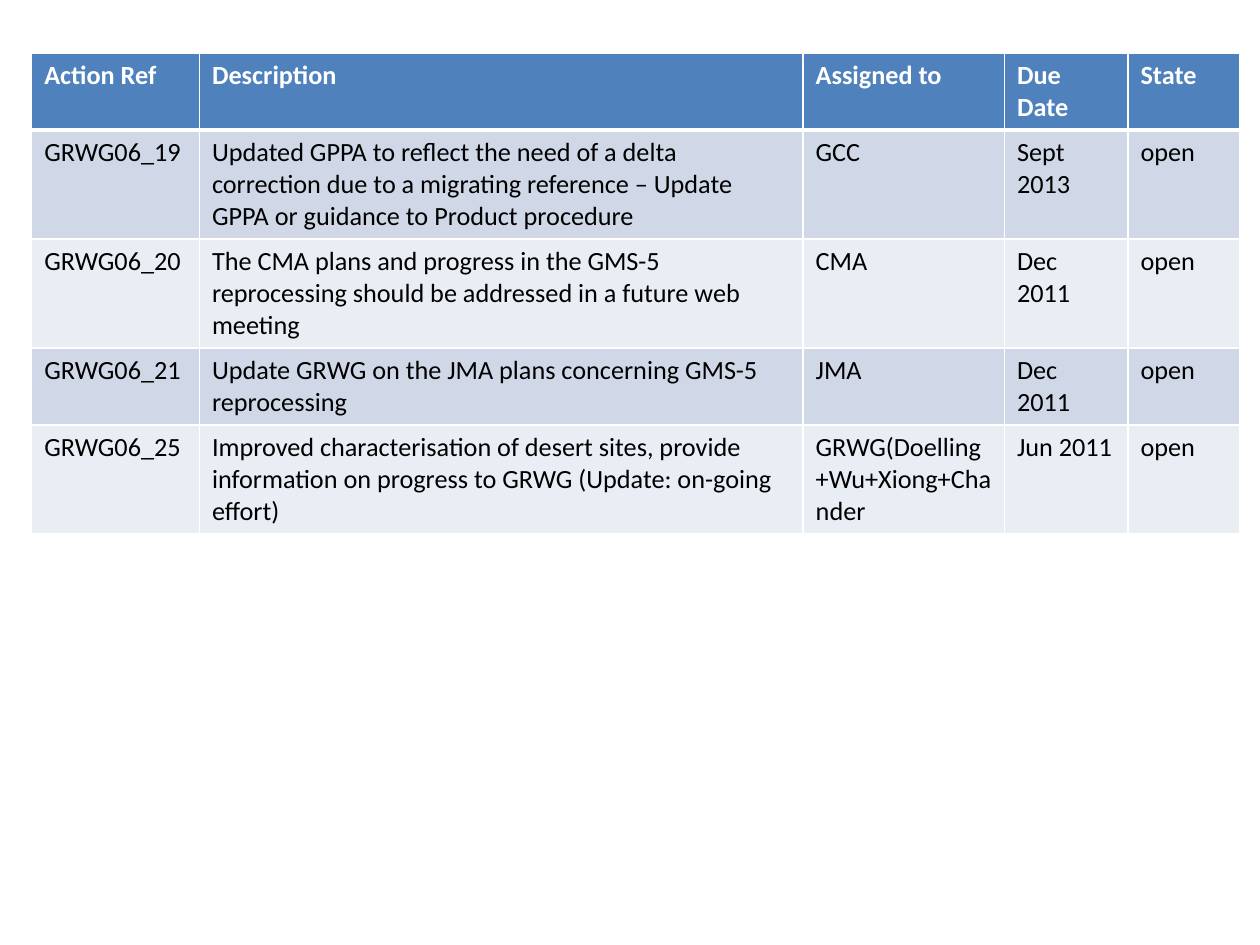
from lxml.etree import SubElement
from pptx import Presentation
from pptx.dml.color import RGBColor
from pptx.oxml.ns import qn
from pptx.util import Cm, Pt

COLORS = {
    "header": "4F81BD",
    "odd_row": "D0D8E8",
    "even_row": "E9EDF4",
    "grid": "FFFFFF",
    "header_text": "FFFFFF",
    "body_text": "000000",
}
COLUMN_WIDTHS = [3.38, 12.17, 4.06, 2.49, 2.26]
ROW_HEIGHT = 1.04
HEADINGS = ["Action Ref", "Description", "Assigned to", "Due Date", "State"]
ACTIONS = [
    ["GRWG06_19",
     "Updated GPPA to reflect the need of a delta correction due to a migrating "
     "reference – Update GPPA or guidance to Product procedure",
     "GCC", "Sept 2013", "open"],
    ["GRWG06_20",
     "The CMA plans and progress in the GMS-5 reprocessing should be addressed "
     "in a future web meeting",
     "CMA", "Dec 2011", "open"],
    ["GRWG06_21",
     "Update GRWG on the JMA plans concerning GMS-5 reprocessing",
     "JMA", "Dec 2011", "open"],
    ["GRWG06_25",
     "Improved characterisation of desert sites, provide information on progress "
     "to GRWG (Update: on-going effort)",
     "GRWG(Doelling+Wu+Xiong+Chander", "Jun 2011", "open"],
]


def set_borders(cell, widths):
    """Draw the white grid lines of a cell, given side letters and points."""
    properties = cell._tc.get_or_add_tcPr()
    for side, points in widths.items():
        line = SubElement(properties, qn(f"a:ln{side}"), w=str(Pt(points)))
        fill = SubElement(line, qn("a:solidFill"))
        SubElement(fill, qn("a:srgbClr"), val=COLORS["grid"])


def write_cell(cell, text, fill, text_color, bold):
    """Fill a cell and set its text."""
    cell.fill.solid()
    cell.fill.fore_color.rgb = RGBColor.from_string(COLORS[fill])
    cell.text = text
    font = cell.text_frame.paragraphs[0].runs[0].font
    for name, value in {"name": "Calibri", "size": Pt(15), "bold": bold}.items():
        setattr(font, name, value)
    font.color.rgb = RGBColor.from_string(COLORS[text_color])


def add_action_table(slide):
    """Add the table of actions with its header and striped rows."""
    rows = [HEADINGS, *ACTIONS]
    actions = slide.shapes.add_table(
        len(rows), len(HEADINGS), Cm(0.64), Cm(1.07),
        Cm(sum(COLUMN_WIDTHS)), Cm(ROW_HEIGHT * len(rows))).table
    for column, width in zip(actions.columns, COLUMN_WIDTHS):
        column.width = Cm(width)
    for index, texts in enumerate(rows):
        is_header = index == 0
        stripe = "odd_row" if index % 2 else "even_row"
        fill = "header" if is_header else stripe
        text_color = "header_text" if is_header else "body_text"
        borders = {"L": 1, "R": 1, "T": 3 if index == 1 else 1,
                   "B": 3 if is_header else 1}
        for cell, text in zip(actions.rows[index].cells, texts):
            set_borders(cell, borders)
            write_cell(cell, text, fill, text_color, is_header)


def main():
    """Build the action list slide."""
    deck = Presentation()
    deck.slide_width, deck.slide_height = Cm(25.4), Cm(19.05)
    add_action_table(deck.slides.add_slide(deck.slide_layouts[6]))
    deck.save("out.pptx")


if __name__ == "__main__":
    main()
